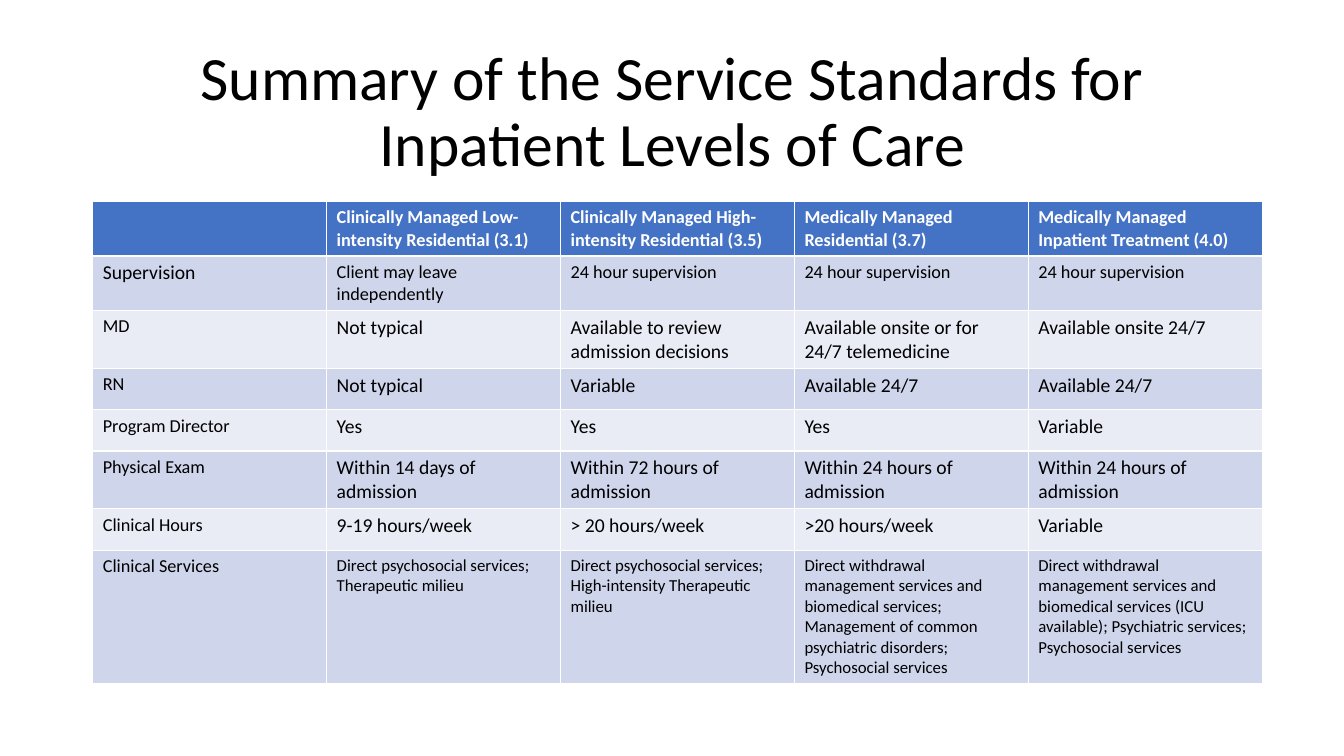
"""Build a slide with a table of service standards for inpatient levels of care."""
from dataclasses import dataclass

from pptx import Presentation
from pptx.dml.color import RGBColor as Rgb
from pptx.enum.text import MSO_ANCHOR as Anchor, MSO_AUTO_SIZE as Fit, PP_ALIGN as Align
from pptx.util import Inches, Pt

WIDE, HIGH = 13.33, 7.5
LEFT = 0.92 / WIDE
COL, ROW = 2.32, 0.41


@dataclass(frozen=True)
class Theme:
    font: str = "Calibri"
    ink: str = "000000"
    white: str = "FFFFFF"
    head: str = "4472C4"
    odd: str = "CFD5EA"
    even: str = "E9EBF5"
    title: int = 44
    large: int = 14
    base: int = 13
    small: int = 12


@dataclass(frozen=True)
class Box:
    left: float
    top: float
    width: float
    height: float

    def place(self) -> tuple:
        return (Inches(self.left * WIDE), Inches(self.top * HIGH),
                Inches(self.width * WIDE), Inches(self.height * HIGH))


@dataclass(frozen=True)
class Level:
    name: str
    cells: tuple
    size: int
    label: int = 13


THEME = Theme()
HEADS = Level("", (
    "Clinically Managed Low-intensity Residential (3.1)",
    "Clinically Managed High-intensity Residential (3.5)",
    "Medically Managed Residential (3.7)",
    "Medically Managed Inpatient Treatment (4.0)"), THEME.base)
LEVELS = (
    Level("Supervision", ("Client may leave independently",)
          + ("24 hour supervision",) * 3, THEME.base, THEME.large),
    Level("MD", ("Not typical", "Available to review admission decisions",
                 "Available onsite or for 24/7 telemedicine",
                 "Available onsite 24/7"), THEME.large),
    Level("RN", ("Not typical", "Variable", "Available 24/7", "Available 24/7"),
          THEME.large),
    Level("Program Director", ("Yes", "Yes", "Yes", "Variable"), THEME.large),
    Level("Physical Exam", tuple(f"Within {span} of admission" for span in
                                 ("14 days", "72 hours", "24 hours", "24 hours")),
          THEME.large),
    Level("Clinical Hours", ("9-19 hours/week", "> 20 hours/week",
                             ">20 hours/week", "Variable"), THEME.large),
    Level("Clinical Services", (
        "Direct psychosocial services;\nTherapeutic milieu",
        "Direct psychosocial services;\nHigh-intensity Therapeutic milieu",
        "Direct withdrawal management services and biomedical services; "
        "Management of common psychiatric disorders;\nPsychosocial services",
        "Direct withdrawal management services and biomedical services "
        "(ICU available); Psychiatric services;\nPsychosocial services"),
        THEME.small),
)


def style(para, size: int, tint: str, bold: bool = False) -> None:
    font = para.font
    font.name, font.size, font.bold = THEME.font, Pt(size), bold
    font.color.rgb = Rgb.from_string(tint)


def add_title(slide, box: Box, text: str) -> None:
    title = slide.shapes.title
    title.left, title.top, title.width, title.height = box.place()
    frame = title.text_frame
    frame.text = text
    frame.word_wrap, frame.auto_size = True, Fit.NONE
    frame.vertical_anchor = Anchor.MIDDLE
    para = frame.paragraphs[0]
    para.alignment, para.line_spacing = Align.CENTER, 0.9
    style(para, THEME.title, THEME.ink)


def fill_row(cells, level: Level, back: str, tint: str, bold: bool) -> None:
    for col, (cell, text) in enumerate(zip(cells, (level.name, *level.cells))):
        cell.fill.solid()
        cell.fill.fore_color.rgb = Rgb.from_string(back)
        cell.text = text
        for para in cell.text_frame.paragraphs:
            style(para, level.size if col else level.label, tint, bold)


def add_grid(slide, left: float, top: float) -> None:
    rows, cols = len(LEVELS) + 1, len(HEADS.cells) + 1
    box = Box(left, top, cols * COL / WIDE, rows * ROW / HIGH)
    table = slide.shapes.add_table(rows, cols, *box.place()).table
    for col in table.columns:
        col.width = Inches(COL)
    for row in table.rows:
        row.height = Inches(ROW)
    fill_row(table.rows[0].cells, HEADS, THEME.head, THEME.white, True)
    for num, level in enumerate(LEVELS, 1):
        back = THEME.odd if num % 2 else THEME.even
        fill_row(table.rows[num].cells, level, back, THEME.ink, False)


def main() -> None:
    deck = Presentation()
    deck.slide_width, deck.slide_height = Inches(WIDE), Inches(HIGH)
    slide = deck.slides.add_slide(deck.slide_layouts.get_by_name("Title Only"))
    add_title(slide, Box(LEFT, 0.4 / HIGH, 11.5 / WIDE, 1.45 / HIGH),
              "Summary of the Service Standards for Inpatient Levels of Care")
    add_grid(slide, LEFT, 2 / HIGH)
    deck.save("out.pptx")


if __name__ == "__main__":
    main()
